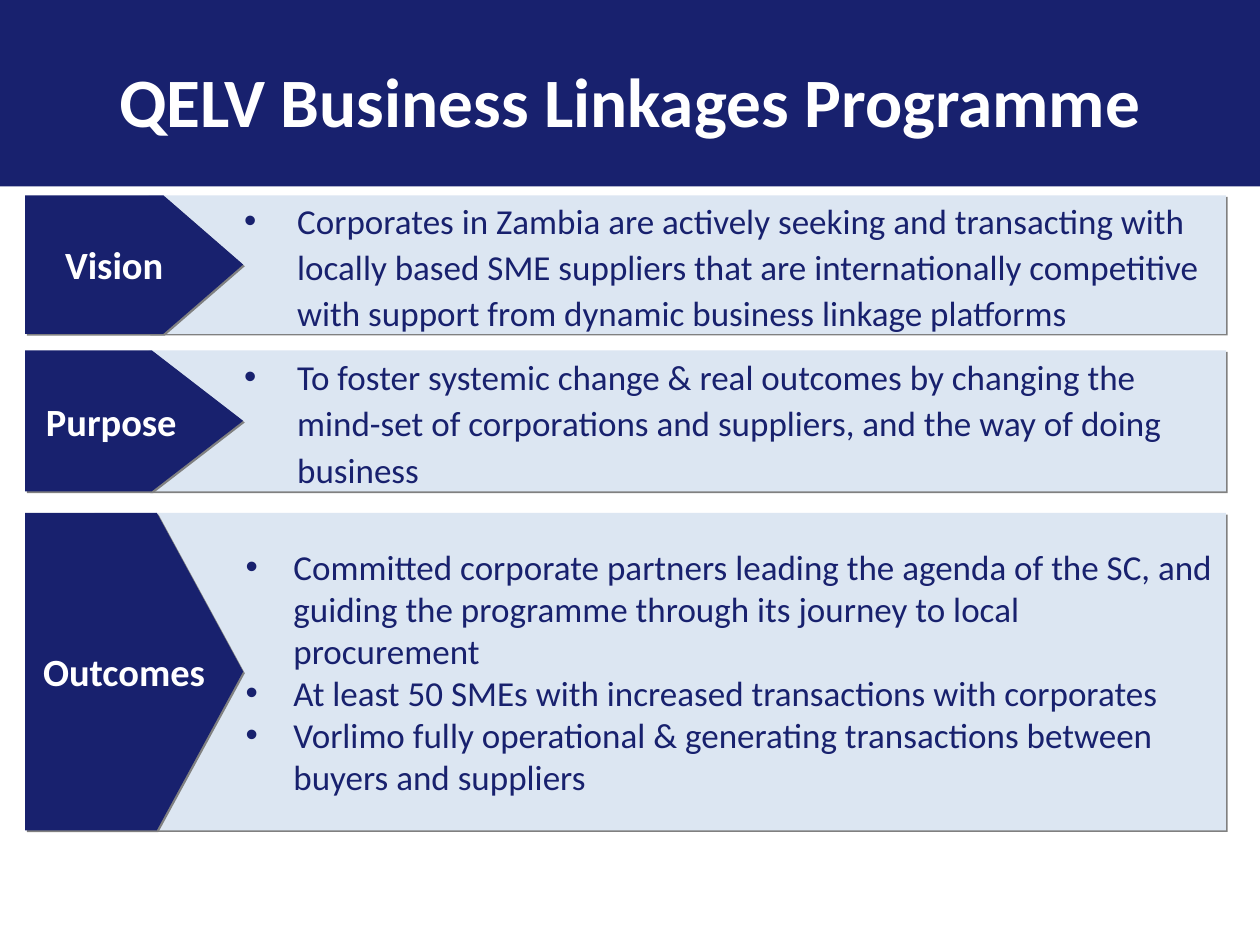
from lxml import etree
from pptx import Presentation
from pptx import util as u
from pptx.dml.color import RGBColor
from pptx.enum import shapes, text
from pptx.oxml.ns import qn

NAVY, PALE, WHITE, GREY = "18216E", "DCE6F2", "FFFFFF", "808080"
PLATE_LEFT, PLATE_WIDTH, PANEL_RIGHT = 0.2, 1.73, 9.73

# label, top, height, panel left, arrow point, text indent, hanging, line spacing, bullets
SECTIONS = [
    ("Vision", 1.55, 1.1, 1.18, 0.576, 1.08, 0.42, 1.1, [
        "Corporates in Zambia are actively seeking and transacting with locally based "
        "SME suppliers that are internationally competitive with support from dynamic "
        "business linkage platforms"]),
    ("Purpose", 2.78, 1.12, 1.18, 0.648, 1.08, 0.42, 1.1, [
        "To foster systemic change & real outcomes by changing the mind-set of "
        "corporations and suppliers, and the way of doing business"]),
    ("Outcomes", 4.07, 2.52, 0.75, 0.396, 1.48, 0.38, 1.0, [
        "Committed corporate partners leading the agenda of the SC, and guiding the "
        "programme through its journey to local procurement",
        "At least 50 SMEs with increased transactions with corporates",
        "Vorlimo fully operational & generating transactions between buyers and suppliers"]),
]


def color(value):
    return RGBColor.from_string(value)


def style_font(paragraph, size, value, bold=False):
    font = paragraph.font
    font.name, font.size, font.bold = "Calibri", u.Pt(size), bold
    font.color.rgb = color(value)


def add_block(slide, kind, left, top, width, height, fill):
    block = slide.shapes.add_shape(kind, *map(u.Inches, (left, top, width, height)))
    block.fill.solid()
    block.fill.fore_color.rgb = color(fill)
    block.line.fill.background()
    block.shadow.inherit = False
    return block


def add_shadow(block):
    effects = block._element.spPr.find(qn("a:effectLst"))
    shadow = etree.SubElement(effects, qn("a:outerShdw"), dist=str(u.Pt(1.4)),
                              dir="2700000", algn="ctr", rotWithShape="0")
    etree.SubElement(shadow, qn("a:srgbClr"), val=GREY)


def prepare_frame(shape, inset=0.1):
    frame = shape.text_frame
    frame.word_wrap = True
    frame.auto_size = text.MSO_AUTO_SIZE.NONE
    frame.vertical_anchor = text.MSO_ANCHOR.MIDDLE
    frame.margin_left = frame.margin_right = u.Inches(0.1)
    frame.margin_top = frame.margin_bottom = u.Inches(inset)
    return frame


def write_centred(shape, words, size, inset=0.1):
    paragraph = prepare_frame(shape, inset).paragraphs[0]
    paragraph.text = words
    paragraph.alignment = text.PP_ALIGN.CENTER
    style_font(paragraph, size, WHITE, bold=True)


def write_bullets(panel, lines, indent, hanging, spacing):
    frame = prepare_frame(panel)
    for number, line in enumerate(lines):
        paragraph = frame.add_paragraph() if number else frame.paragraphs[0]
        paragraph.text = line
        paragraph.alignment = text.PP_ALIGN.LEFT
        paragraph.line_spacing = spacing
        properties = paragraph._p.get_or_add_pPr()
        properties.set("marL", str(u.Inches(indent)))
        properties.set("indent", str(-u.Inches(hanging)))
        etree.SubElement(properties, qn("a:buFont"), typeface="Arial")
        etree.SubElement(properties, qn("a:buChar"), char="•")
        style_font(paragraph, 20, NAVY)


def add_header(slide):
    band = add_block(slide, shapes.MSO_SHAPE.RECTANGLE, 0, 0, 10, 1.48, NAVY)
    title = slide.shapes.title
    title.left, title.top, title.width, title.height = map(u.Inches, (0.5, 0.21, 9, 1.16))
    write_centred(title, "QELV Business Linkages Programme", 39.6, inset=0.05)
    # The band lies behind the title
    title._element.addprevious(band._element)


def add_panel(slide, section):
    _, top, height, left, _, indent, hanging, spacing, lines = section
    panel = add_block(slide, shapes.MSO_SHAPE.RECTANGLE, left, top,
                      PANEL_RIGHT - left, height, PALE)
    add_shadow(panel)
    write_bullets(panel, lines, indent, hanging, spacing)


def add_plate(slide, section):
    label, top, height, _, point = section[:5]
    plate = add_block(slide, shapes.MSO_SHAPE.PENTAGON, PLATE_LEFT, top,
                      PLATE_WIDTH, height, NAVY)
    plate.adjustments[0] = point
    add_shadow(plate)
    if label == "Outcomes":
        # This label is wider than the plate's own text area
        caption = slide.shapes.add_textbox(*map(u.Inches, (0.12, 5.09, PLATE_WIDTH, 0.47)))
        write_centred(caption, label, 22, inset=0.05)
    else:
        write_centred(plate, label, 22)


def main():
    presentation = Presentation()
    presentation.slide_width, presentation.slide_height = u.Inches(10), u.Inches(7.5)
    slide = presentation.slides.add_slide(presentation.slide_layouts[5])

    add_header(slide)
    # Panels first, so the arrow plates overlap them
    for section in SECTIONS:
        add_panel(slide, section)
    for section in SECTIONS:
        add_plate(slide, section)

    presentation.save("out.pptx")


if __name__ == "__main__":
    main()
